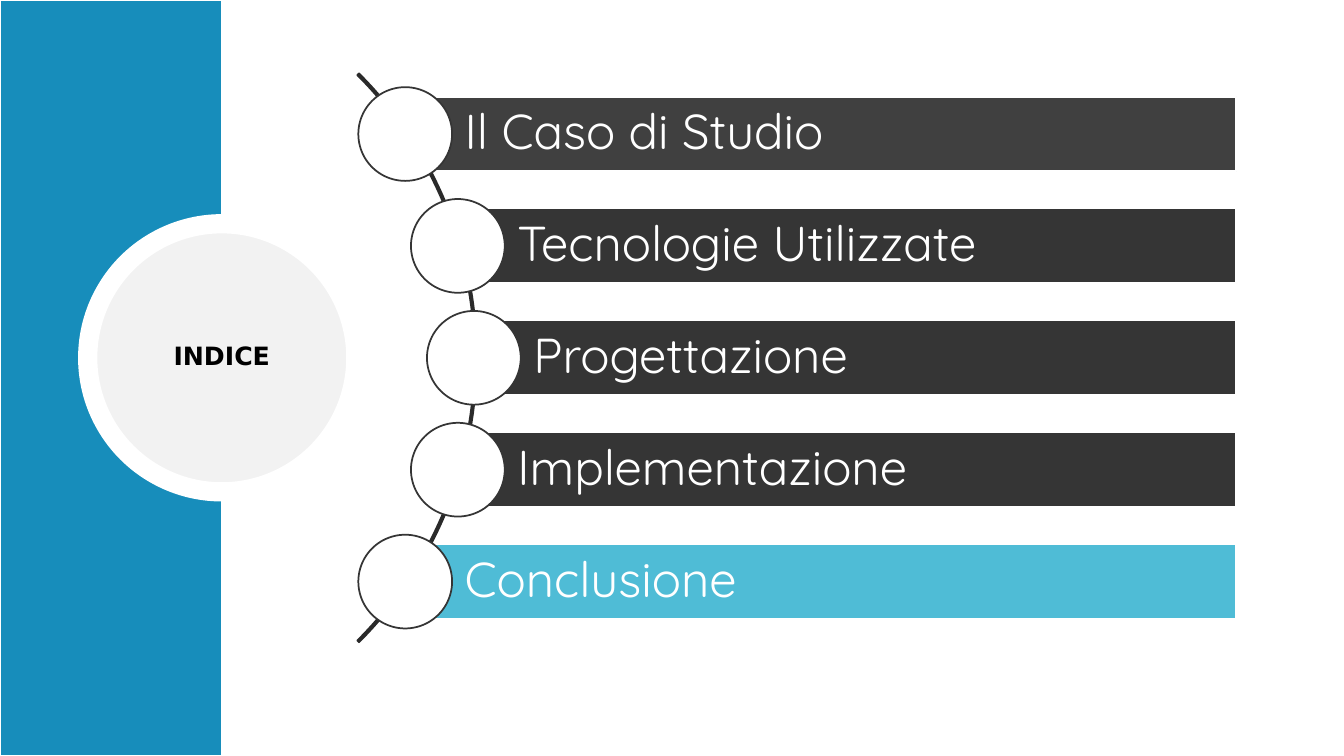
from math import sqrt

from pptx import Presentation
from pptx.dml.color import RGBColor
from pptx.enum.shapes import MSO_SHAPE
from pptx.enum.text import MSO_ANCHOR, PP_ALIGN
from pptx.util import Inches, Pt

WHITE = RGBColor(0xFF, 0xFF, 0xFF)
BLACK = RGBColor(0x00, 0x00, 0x00)
BLUE = RGBColor(0x17, 0x8D, 0xBB)
PALE = RGBColor(0xF2, 0xF2, 0xF2)
INK = RGBColor(0x2A, 0x2A, 0x2A)
DARK = RGBColor(0x35, 0x35, 0x35)
GREY = RGBColor(0x40, 0x40, 0x40)
CYAN = RGBColor(0x4F, 0xBC, 0xD6)

TITLE = "INDICE"
TOPICS = [
    ("Il Caso di Studio", GREY),
    ("Tecnologie Utilizzate", DARK),
    ("Progettazione", DARK),
    ("Implementazione", DARK),
    ("Conclusione", CYAN),
]

WIDTH, HEIGHT = 13.33, 7.5
BAND_W = 2.2
TITLE_D = 2.66
ARC_X, ARC_Y, ARC_D = 0.74, 3.55, 7.98
TRACK_R = 3.96
ROW_STEP = 1.11
BAR_H, BAR_RIGHT = 0.74, 12.26
DOT_D = 0.93


def add_shape(s, kind, box, fill, line, weight):
    sp = s.shapes.add_shape(kind, *(Inches(v) for v in box))
    sp.shadow.inherit = False
    sp.fill.solid()
    sp.fill.fore_color.rgb = fill
    sp.line.color.rgb = line
    sp.line.width = Pt(weight)
    return sp


def circle_box(x, y, d):
    return x - d / 2, y - d / 2, d, d


def write(sp, text, font, size, color, align, bold=False):
    tf = sp.text_frame
    tf.word_wrap = True
    tf.vertical_anchor = MSO_ANCHOR.MIDDLE
    p = tf.paragraphs[0]
    p.text = text
    p.alignment = align
    p.line_spacing = 0.9
    r = p.runs[0]
    r.font.name = font
    r.font.size = Pt(size)
    r.font.bold = bold
    r.font.color.rgb = color
    return tf


def add_topic(s, text, fill, x, y):
    bar = add_shape(s, MSO_SHAPE.RECTANGLE,
                    (x, y - BAR_H / 2, BAR_RIGHT - x, BAR_H), fill, WHITE, 1.25)
    tf = write(bar, text, "Quicksand", 35, WHITE, PP_ALIGN.LEFT)
    tf.margin_left = Inches(0.59)
    tf.margin_right = tf.margin_top = tf.margin_bottom = Inches(0.1)
    add_shape(s, MSO_SHAPE.OVAL, circle_box(x, y, DOT_D), WHITE, DARK, 1.25)


def main():
    """Build the index slide with topics placed along an arc."""
    prs = Presentation()
    prs.slide_width, prs.slide_height = Inches(WIDTH), Inches(HEIGHT)
    s = prs.slides.add_slide(prs.slide_layouts[6])

    add_shape(s, MSO_SHAPE.RECTANGLE, (0, 0, BAND_W, HEIGHT), BLUE, WHITE, 1)
    disc = add_shape(s, MSO_SHAPE.OVAL, circle_box(BAND_W, ARC_Y, TITLE_D),
                     PALE, WHITE, 13.75)
    write(disc, TITLE, "DejaVu Sans", 18, BLACK, PP_ALIGN.CENTER, True)

    arc = add_shape(s, MSO_SHAPE.BLOCK_ARC, circle_box(ARC_X, ARC_Y, ARC_D),
                    INK, INK, 1.25)
    for i, value in enumerate((189, 27, 0.003)):
        arc.adjustments[i] = value

    middle = (len(TOPICS) - 1) / 2
    for i, (text, fill) in enumerate(TOPICS):
        dy = (i - middle) * ROW_STEP
        add_topic(s, text, fill, ARC_X + sqrt(TRACK_R ** 2 - dy ** 2), ARC_Y + dy)

    prs.save("out.pptx")


if __name__ == "__main__":
    main()
